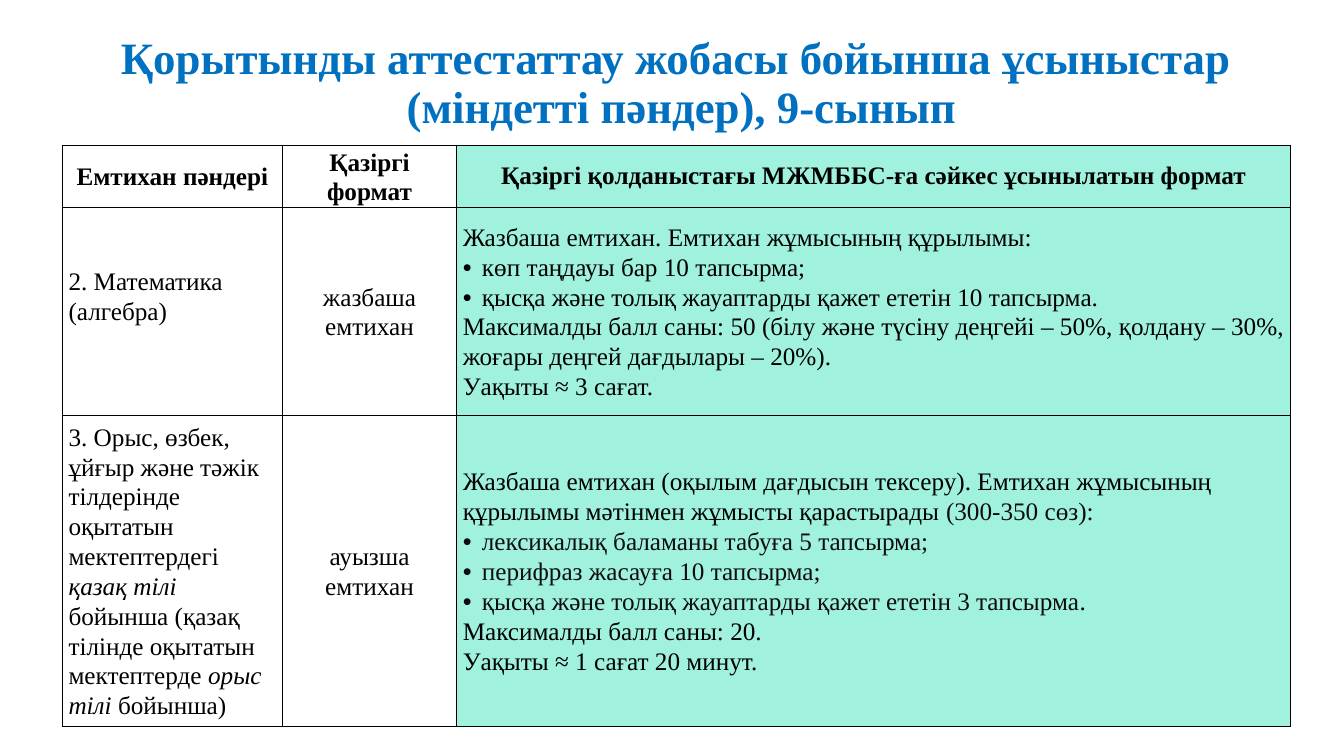
from dataclasses import dataclass

from lxml import etree
from pptx import Presentation
from pptx import util as u
from pptx.dml.color import RGBColor
from pptx.enum import text
from pptx.oxml import ns

EMU_PER_PX = 9144
FONT = "Times New Roman"
COLORS = {"title": "0070C0", "proposal": "A0F1DE", "text": "000000", "soft": "0D0D0D"}
LEFT, CENTER, JUSTIFY = text.PP_ALIGN.LEFT, text.PP_ALIGN.CENTER, text.PP_ALIGN.JUSTIFY
COLUMN_WIDTHS = (218, 173, 827)
ROW_HEIGHTS = (62, 206, 309)
BULLET_INDENT = 19
LINE_HEIGHT = 30


@dataclass(frozen=True)
class Run:
    text: str
    italic: bool = False
    color: str = "text"


@dataclass(frozen=True)
class Para:
    runs: tuple[Run, ...]
    align: text.PP_ALIGN = LEFT
    bullet: bool = False
    spacing: float = 1.07


@dataclass(frozen=True)
class Entry:
    paras: tuple[Para, ...]
    bottom: int = 0


def px(length: int) -> u.Emu:
    return u.Emu(length * EMU_PER_PX)


def line(words: str, align: text.PP_ALIGN = LEFT, bullet: bool = False,
         spacing: float = 1.07, color: str = "text") -> Para:
    return Para((Run(words, color=color),), align, bullet, spacing)


def single(words: str, align: text.PP_ALIGN = CENTER, spacing: float = 1.07,
           bottom: int = 0) -> Entry:
    return Entry((line(words, align, spacing=spacing),), bottom)


ROWS = (
    (
        single("Емтихан пәндері"),
        single("Қазіргі формат"),
        single("Қазіргі қолданыстағы МЖМББС-ға сәйкес ұсынылатын формат", spacing=1.0),
    ),
    (
        single("2. Математика (алгебра)", LEFT, bottom=LINE_HEIGHT),
        single("жазбаша емтихан"),
        Entry((
            line("Жазбаша емтихан. Емтихан жұмысының құрылымы:", JUSTIFY),
            line("көп таңдауы бар 10 тапсырма;", JUSTIFY, True),
            line("қысқа және толық жауаптарды қажет ететін 10 тапсырма.", JUSTIFY, True),
            line("Максималды балл саны: 50 (білу және түсіну деңгейі – 50%, "
                 "қолдану – 30%, жоғары деңгей дағдылары – 20%).", JUSTIFY),
            line("Уақыты ≈ 3 сағат.", JUSTIFY),
        )),
    ),
    (
        Entry((Para((
            Run("3. Орыс, өзбек, ұйғыр және тәжік тілдерінде оқытатын мектептердегі "),
            Run("қазақ тілі", italic=True),
            Run(" бойынша (қазақ тілінде оқытатын мектептерде "),
            Run("орыс тілі ", italic=True),
            Run("бойынша)"),
        )),)),
        single("ауызша емтихан"),
        Entry((
            Para((
                Run("Жазбаша емтихан (оқылым дағдысын тексеру). Емтихан жұмысының "
                    "құрылымы мәтінмен жұмысты қарастырады "),
                Run("(300-350 сөз):", color="soft"),
            )),
            line("лексикалық баламаны табуға 5 тапсырма;", bullet=True, color="soft"),
            line("перифраз жасауға 10 тапсырма;", bullet=True, color="soft"),
            Para((
                Run("қысқа және толық жауаптарды қажет ететін 3 тапсырма", color="soft"),
                Run("."),
            ), bullet=True),
            line("Максималды балл саны: 20.", JUSTIFY),
            line("Уақыты ≈ 1 сағат 20 минут.", JUSTIFY),
        )),
    ),
)


def apply(target, values: dict) -> None:
    for name, value in values.items():
        setattr(target, name, value)


def style_run(run, size: int, color: str, bold: bool, italic: bool = False) -> None:
    apply(run.font, {"name": FONT, "size": u.Pt(size), "bold": bold, "italic": italic})
    run.font.color.rgb = RGBColor.from_string(COLORS[color])


def add_bullet(paragraph) -> None:
    properties = paragraph._p.get_or_add_pPr()
    properties.set("marL", str(px(BULLET_INDENT)))
    properties.set("indent", str(-px(BULLET_INDENT)))
    etree.SubElement(properties, ns.qn("a:buFont"), typeface="Arial")
    etree.SubElement(properties, ns.qn("a:buChar"), char="•")


def add_borders(cell) -> None:
    properties = cell._tc.get_or_add_tcPr()
    for side in ("lnL", "lnR", "lnT", "lnB"):
        border = etree.SubElement(properties, ns.qn(f"a:{side}"), w=str(u.Pt(1)))
        fill = etree.SubElement(border, ns.qn("a:solidFill"))
        etree.SubElement(fill, ns.qn("a:srgbClr"), val=COLORS["text"])


def fill_cell(cell, entry: Entry, heading: bool, proposal: bool) -> None:
    apply(cell, {
        "margin_left": px(6), "margin_right": px(6), "margin_top": 0,
        "margin_bottom": px(entry.bottom), "vertical_anchor": text.MSO_ANCHOR.MIDDLE,
    })
    add_borders(cell)
    if proposal:
        cell.fill.solid()
        cell.fill.fore_color.rgb = RGBColor.from_string(COLORS["proposal"])
    else:
        cell.fill.background()
    frame = cell.text_frame
    for index, para in enumerate(entry.paras):
        paragraph = frame.add_paragraph() if index else frame.paragraphs[0]
        apply(paragraph, {"alignment": para.align, "line_spacing": para.spacing})
        if para.bullet:
            add_bullet(paragraph)
        for part in para.runs:
            run = paragraph.add_run()
            run.text = part.text
            style_run(run, 18, part.color, heading, part.italic)


def add_title(slide) -> None:
    frame = slide.shapes.add_textbox(px(49), px(31), px(1254), px(67)).text_frame
    apply(frame, {"word_wrap": True, "vertical_anchor": text.MSO_ANCHOR.TOP,
                  "auto_size": text.MSO_AUTO_SIZE.NONE})
    heading = frame.paragraphs[0]
    heading.text = ("Қорытынды аттестаттау жобасы бойынша ұсыныстар \v"
                    "(міндетті пәндер), 9-сынып")
    apply(heading, {"alignment": CENTER, "line_spacing": 0.9})
    for run in heading.runs:
        style_run(run, 32, "title", True)


def add_exam_table(slide) -> None:
    exams = slide.shapes.add_table(
        len(ROW_HEIGHTS), len(COLUMN_WIDTHS), px(62), px(144),
        px(sum(COLUMN_WIDTHS)), px(sum(ROW_HEIGHTS))).table
    apply(exams, {"first_row": False, "horz_banding": False})
    for column, width in zip(exams.columns, COLUMN_WIDTHS):
        column.width = px(width)
    for row, height in zip(exams.rows, ROW_HEIGHTS):
        row.height = px(height)
    for r, entries in enumerate(ROWS):
        for c, entry in enumerate(entries):
            fill_cell(exams.cell(r, c), entry, heading=r == 0, proposal=c == 2)


def main() -> None:
    deck = Presentation()
    apply(deck, {"slide_width": px(1333), "slide_height": px(750)})
    slide = deck.slides.add_slide(deck.slide_layouts[6])
    add_exam_table(slide)
    add_title(slide)
    deck.save("out.pptx")


if __name__ == "__main__":
    main()
